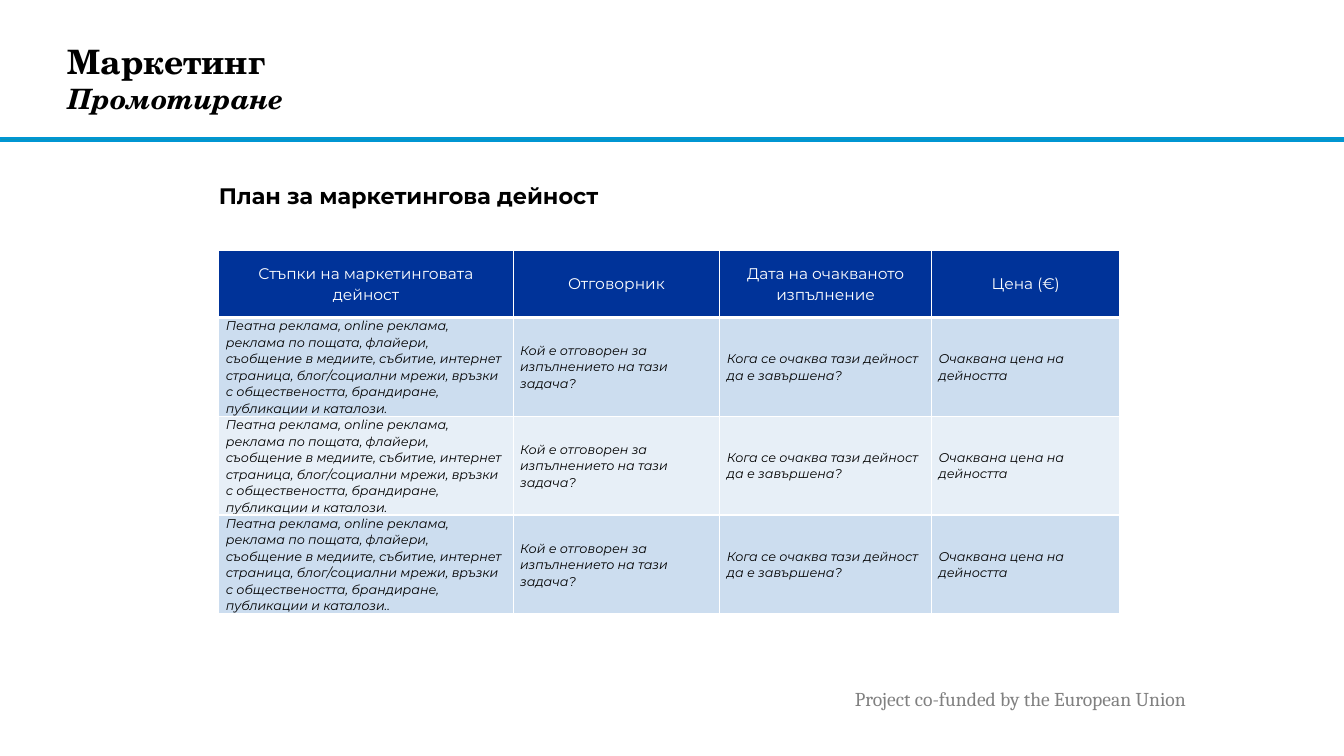
from dataclasses import dataclass

from lxml.etree import SubElement
from pptx import Presentation
from pptx.dml.color import RGBColor
from pptx.enum.shapes import MSO_SHAPE
from pptx.enum.text import MSO_ANCHOR, PP_ALIGN
from pptx.oxml.ns import qn
from pptx.slide import Slide
from pptx.table import _Cell
from pptx.text.text import Font, TextFrame
from pptx.util import Inches, Pt

BLACK = RGBColor(0x00, 0x00, 0x00)
WHITE = RGBColor(0xFF, 0xFF, 0xFF)
GRAY = RGBColor(0x80, 0x80, 0x80)
RULE_FILL = RGBColor(0x0C, 0x94, 0xB7)
RULE_LINE = RGBColor(0x00, 0x96, 0xD3)
HEADER_BLUE = RGBColor(0x00, 0x33, 0x99)
BAND_DARK = RGBColor(0xCC, 0xDD, 0xEF)
BAND_LIGHT = RGBColor(0xE7, 0xEF, 0xF7)


@dataclass(frozen=True)
class TextStyle:
    face: str
    size: float
    color: RGBColor = BLACK
    bold: bool = False
    italic: bool = False


@dataclass(frozen=True)
class RowStyle:
    text: TextStyle
    align: PP_ALIGN
    space_after: float
    bottom_border: float


@dataclass(frozen=True)
class Column:
    width: float
    heading: str
    prompt: str


TITLE = TextStyle("TeX Gyre Schola", 24, bold=True)
SUBTITLE = TextStyle("TeX Gyre Schola", 20, bold=True, italic=True)
PLAN_HEADING = TextStyle("Montserrat", 16, bold=True)
FOOTER = TextStyle("Cambria", 14, GRAY)
HEADER_ROW = RowStyle(TextStyle("Montserrat", 11, WHITE), PP_ALIGN.CENTER, 0, 3)
STEP_ROW = RowStyle(TextStyle("Montserrat", 9, italic=True), PP_ALIGN.LEFT, 8, 1)

COLUMNS = [
    Column(2.92, "Стъпки на маркетинговата дейност",
           "Пеатна реклама, online реклама, реклама по пощата, флайери, "
           "съобщение в медиите, събитие, интернет страница, блог/социални "
           "мрежи, връзки с обществеността, брандиране, публикации и каталози."),
    Column(2.05, "Отговорник", "Кой е отговорен за изпълнението на тази задача?"),
    Column(2.1, "Дата на очакваното изпълнение",
           "Кога се очаква тази дейност да е завършена?"),
    Column(1.87, "Цена (€)", "Очаквана цена на дейността"),
]
STEP_BANDS = [BAND_DARK, BAND_LIGHT, BAND_DARK]
HEADER_HEIGHT, STEP_HEIGHT = 0.67, 0.98


def apply_style(font: Font, style: TextStyle) -> None:
    font.name = style.face
    font.size = Pt(style.size)
    font.color.rgb = style.color
    font.bold = style.bold
    font.italic = style.italic


def add_text_frame(slide: Slide, left: float, top: float, width: float,
                   height: float, side_inset: float, end_inset: float) -> TextFrame:
    frame = slide.shapes.add_textbox(
        Inches(left), Inches(top), Inches(width), Inches(height)).text_frame
    frame.word_wrap = True
    frame.margin_left = frame.margin_right = Inches(side_inset)
    frame.margin_top = frame.margin_bottom = Inches(end_inset)
    return frame


def add_title(slide: Slide) -> None:
    frame = add_text_frame(slide, 0.67, 0.18, 9.69, 1.19, 0, 0)
    frame.vertical_anchor = MSO_ANCHOR.MIDDLE
    paragraph = frame.paragraphs[0]
    topic = paragraph.add_run()
    topic.text = "Маркетинг"
    apply_style(topic.font, TITLE)
    paragraph.add_line_break()
    subtopic = paragraph.add_run()
    subtopic.text = "Промотиране"
    apply_style(subtopic.font, SUBTITLE)


def add_line_of_text(frame: TextFrame, text: str, style: TextStyle) -> None:
    paragraph = frame.paragraphs[0]
    paragraph.text = text
    apply_style(paragraph.font, style)


def add_header_rule(slide: Slide) -> None:
    rule = slide.shapes.add_shape(
        MSO_SHAPE.RECTANGLE, 0, Inches(1.37), Inches(13.33), Inches(0.03))
    rule.shadow.inherit = False
    rule.fill.solid()
    rule.fill.fore_color.rgb = RULE_FILL
    rule.line.color.rgb = RULE_LINE
    rule.line.width = Pt(1)


def set_borders(cell: _Cell, bottom_width: float) -> None:
    """Draw white borders; they must precede the fill in the cell's XML."""
    properties = cell._tc.get_or_add_tcPr()
    widths = {"a:lnL": 1, "a:lnR": 1, "a:lnT": 1, "a:lnB": bottom_width}
    for tag, width in widths.items():
        border = SubElement(properties, qn(tag), w=str(Pt(width)))
        fill = SubElement(border, qn("a:solidFill"))
        SubElement(fill, qn("a:srgbClr"), val=str(WHITE))


def fill_cell(cell: _Cell, text: str, fill: RGBColor, style: RowStyle) -> None:
    set_borders(cell, style.bottom_border)
    cell.fill.solid()
    cell.fill.fore_color.rgb = fill
    cell.vertical_anchor = MSO_ANCHOR.MIDDLE
    cell.margin_left = cell.margin_right = Inches(0.07)
    cell.margin_top = cell.margin_bottom = 0
    add_line_of_text(cell.text_frame, text, style.text)
    paragraph = cell.text_frame.paragraphs[0]
    paragraph.alignment = style.align
    paragraph.line_spacing = 1.07
    paragraph.space_after = Pt(style.space_after)


def add_plan_table(slide: Slide) -> None:
    width = sum(column.width for column in COLUMNS)
    height = HEADER_HEIGHT + STEP_HEIGHT * len(STEP_BANDS)
    plan = slide.shapes.add_table(
        len(STEP_BANDS) + 1, len(COLUMNS),
        Inches(2.17), Inches(2.48), Inches(width), Inches(height)).table
    plan.rows[0].height = Inches(HEADER_HEIGHT)
    for index, column in enumerate(COLUMNS):
        plan.columns[index].width = Inches(column.width)
        fill_cell(plan.cell(0, index), column.heading, HEADER_BLUE, HEADER_ROW)
    for step, band in enumerate(STEP_BANDS, start=1):
        plan.rows[step].height = Inches(STEP_HEIGHT)
        for index, column in enumerate(COLUMNS):
            closes_list = step == len(STEP_BANDS) and index == 0
            prompt = column.prompt + ("." if closes_list else "")
            fill_cell(plan.cell(step, index), prompt, band, STEP_ROW)


def main() -> None:
    deck = Presentation()
    deck.slide_width = Inches(13.33)
    deck.slide_height = Inches(7.5)
    slide = deck.slides.add_slide(deck.slide_layouts[6])
    add_header_rule(slide)
    footer = add_text_frame(slide, 8.38, 6.77, 4.88, 0.34, 0.1, 0.05)
    add_line_of_text(footer, "Project co-funded by the European Union", FOOTER)
    add_title(slide)
    plan_heading = add_text_frame(slide, 2.17, 1.76, 8.49, 0.5, 0, 0.05)
    add_line_of_text(plan_heading, "План за маркетингова дейност", PLAN_HEADING)
    add_plan_table(slide)
    deck.save("out.pptx")


if __name__ == "__main__":
    main()
